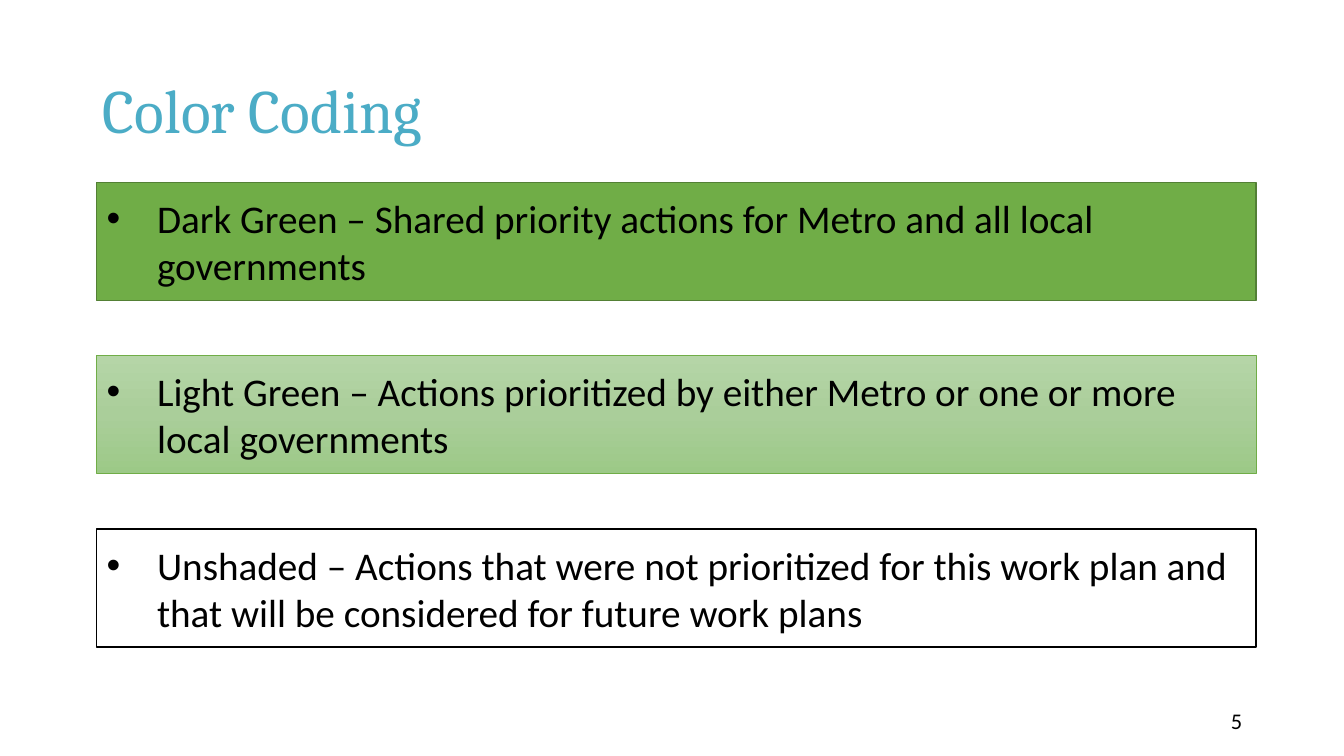
from copy import deepcopy
from dataclasses import dataclass

from lxml import etree
from pptx import Presentation
from pptx import util as u
from pptx.dml.color import RGBColor
from pptx.enum import shapes, text
from pptx.oxml import ns

EMU_PER_PX = 9144


@dataclass(frozen=True)
class Theme:
    """Colours, fonts and type sizes of the slide."""
    title: str = "4BACC6"
    ink: str = "000000"
    paper: str = "FFFFFF"
    green: str = "70AD47"
    green_edge: str = "538035"
    light_green: tuple = ("B5D5A7", "AACE9A", "9CC987")
    heading_font: str = "Cambria"
    body_font: str = "Calibri"
    title_size: int = 44
    body_size: int = 28
    number_size: int = 16


THEME = Theme()


def px(length):
    """Turn px into EMU."""
    return u.Emu(length * EMU_PER_PX)


def rgb(value):
    """Turn a hex string into a colour."""
    return RGBColor.from_string(value)


def add_run(paragraph, words, font, size, color):
    """Add one formatted run."""
    run = paragraph.add_run()
    run.text = words
    run.font.name = font
    run.font.size = u.Pt(size)
    run.font.color.rgb = rgb(color)


def prepare_frame(shape):
    """Wrap and centre the text vertically, and return its first paragraph."""
    frame = shape.text_frame
    frame.word_wrap = True
    frame.auto_size = text.MSO_AUTO_SIZE.NONE
    frame.vertical_anchor = text.MSO_ANCHOR.MIDDLE
    return frame.paragraphs[0]


def set_title(slide, words):
    """Place and fill the title placeholder."""
    title = slide.shapes.title
    title.left, title.top, title.width, title.height = map(px, (92, 40, 1150, 145))
    paragraph = prepare_frame(title)
    paragraph.alignment = text.PP_ALIGN.LEFT
    paragraph.line_spacing = 0.9
    add_run(paragraph, words, THEME.heading_font, THEME.title_size, THEME.title)


def add_page_number(slide, number):
    """Add the page number at the lower right."""
    box = slide.shapes.add_textbox(*map(px, (942, 695, 300, 40)))
    paragraph = prepare_frame(box)
    paragraph.alignment = text.PP_ALIGN.RIGHT
    add_run(paragraph, number, THEME.body_font, THEME.number_size, THEME.ink)


def set_bullet(paragraph, indent):
    """Give the paragraph a round bullet with a hanging indent."""
    properties = paragraph._p.get_or_add_pPr()
    properties.set("marL", str(px(indent)))
    properties.set("indent", str(-px(indent)))
    etree.SubElement(properties, ns.qn("a:buFont"), typeface="Arial")
    etree.SubElement(properties, ns.qn("a:buChar"), char="•")


def fill_gradient(shape, colors):
    """Fill the shape with evenly spaced colours from top to bottom."""
    shape.fill.gradient()
    shape.fill.gradient_angle = 270
    stop_list = shape._element.spPr.find(".//" + ns.qn("a:gsLst"))
    for _ in colors[2:]:
        stop_list.append(deepcopy(stop_list[-1]))
    for index, (stop, color) in enumerate(zip(shape.fill.gradient_stops, colors)):
        stop.position = index / (len(colors) - 1)
        stop.color.rgb = rgb(color)


def add_band(slide, top, words, colors, edge, edge_width):
    """Add a bulleted rectangle in one colour or a gradient."""
    band = slide.shapes.add_shape(
        shapes.MSO_SHAPE.RECTANGLE, *map(px, (96, top, 1150, 117)))
    band.shadow.inherit = False
    if len(colors) > 1:
        fill_gradient(band, colors)
    else:
        band.fill.solid()
        band.fill.fore_color.rgb = rgb(colors[0])
    band.line.color.rgb = rgb(edge)
    band.line.width = u.Pt(edge_width)
    paragraph = prepare_frame(band)
    paragraph.alignment = text.PP_ALIGN.LEFT
    set_bullet(paragraph, 50)
    add_run(paragraph, words, THEME.body_font, THEME.body_size, THEME.ink)


def main():
    """Build and save the slide."""
    presentation = Presentation()
    presentation.slide_width, presentation.slide_height = px(1333), px(750)
    slide = presentation.slides.add_slide(presentation.slide_layouts[5])
    set_title(slide, "Color Coding")
    add_page_number(slide, "5")
    bands = (
        ("Dark Green – Shared priority actions for Metro and all local governments",
         (THEME.green,), THEME.green_edge, 1),
        ("Light Green – Actions prioritized by either Metro or one or more local governments",
         THEME.light_green, THEME.green, 0.5),
        ("Unshaded – Actions that were not prioritized for this work plan "
         "and that will be considered for future work plans",
         (THEME.paper,), THEME.ink, 1),
    )
    for index, band in enumerate(bands):
        add_band(slide, 181 + 172 * index, *band)
    presentation.save("out.pptx")


if __name__ == "__main__":
    main()
